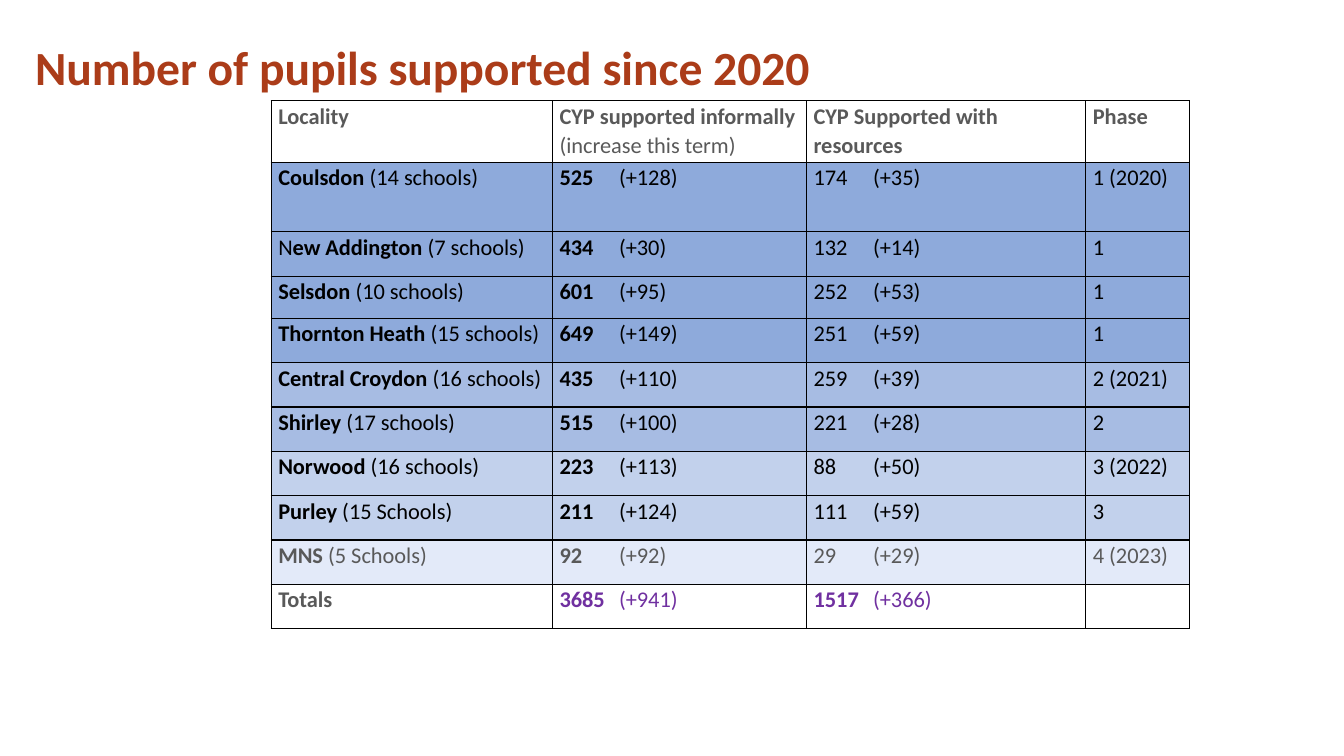
from lxml.etree import SubElement
from pptx import Presentation
from pptx.dml.color import RGBColor
from pptx.enum.text import MSO_ANCHOR
from pptx.oxml.ns import qn
from pptx.util import Inches, Pt

BLACK, GREY, PURPLE, RUST = "000000", "595959", "7030A0", "AB3C19"
DEEP_BLUE, MID_BLUE, LIGHT_BLUE, PALE_BLUE = "8EAADB", "A7BCE3", "C2D1EC", "E3EAF9"


def write_text(frame, text, size=16, color=BLACK, line_spacing=1.07, space_after=8, tab=None):
    """Write one paragraph; parts between asterisks are bold."""
    paragraph = frame.paragraphs[0]
    if tab:
        tab_list = SubElement(paragraph._p.get_or_add_pPr(), qn("a:tabLst"))
        SubElement(tab_list, qn("a:tab"), pos=str(Inches(tab)), algn="l")
    paragraph.line_spacing = line_spacing
    paragraph.space_after = Pt(space_after)
    for index, part in enumerate(text.split("*")):
        if part:
            run = paragraph.add_run()
            run.text = part
            run.font.name = "Calibri"
            run.font.size = Pt(size)
            run.font.bold = index % 2 == 1
            run.font.color.rgb = RGBColor.from_string(color)


def style_cell(cell, fill):
    """Set insets, fill and a thin black border on all four sides."""
    cell.margin_left = cell.margin_right = Inches(0.07)
    cell.margin_top = cell.margin_bottom = 0
    properties = cell._tc.get_or_add_tcPr()
    for side in ("a:lnL", "a:lnR", "a:lnT", "a:lnB"):
        line = SubElement(properties, qn(side), w=str(Pt(1)))
        solid = SubElement(line, qn("a:solidFill"))
        SubElement(solid, qn("a:srgbClr"), val=BLACK)
    if fill:
        cell.fill.solid()
        cell.fill.fore_color.rgb = RGBColor.from_string(fill)
    else:
        cell.fill.background()


presentation = Presentation()
presentation.slide_width = Inches(13.33)
presentation.slide_height = Inches(7.5)
slide = presentation.slides.add_slide(presentation.slide_layouts[6])

# Title
title = slide.shapes.add_textbox(Inches(0.25), Inches(0.16), Inches(9.64), Inches(0.84))
title.text_frame.word_wrap = True
title.text_frame.vertical_anchor = MSO_ANCHOR.BOTTOM
write_text(title.text_frame, "*Number of pupils supported since 2020*",
           size=34, color=RUST, line_spacing=0.9, space_after=0)

# Table contents: row fill, text colour, then the four cells
rows = [
    (None, GREY, "*Locality*", "*CYP supported informally *(increase this term)",
     "*CYP Supported with resources*", "*Phase*"),
    (DEEP_BLUE, BLACK, "*Coulsdon* (14 schools)", "*525*\t(+128)", "174\t(+35)", "1 (2020)"),
    (DEEP_BLUE, BLACK, "N*ew Addington *(7 schools)", "*434*\t(+30)", "132\t(+14)", "1"),
    (DEEP_BLUE, BLACK, "*Selsdon* (10 schools)", "*601*\t(+95)", "252\t(+53)", "1"),
    (DEEP_BLUE, BLACK, "*Thornton Heath *(15 schools)", "*649*\t(+149)", "251\t(+59)", "1"),
    (MID_BLUE, BLACK, "*Central Croydon *(16 schools)", "*435*\t(+110)", "259\t(+39)", "2 (2021)"),
    (MID_BLUE, BLACK, "*Shirley* (17 schools)", "*515*\t(+100)", "221\t(+28)", "2"),
    (LIGHT_BLUE, BLACK, "*Norwood* (16 schools)", "*223*\t(+113)", "88\t(+50)", "3 (2022)"),
    (LIGHT_BLUE, BLACK, "*Purley* (15 Schools)", "*211*\t(+124)", "111\t(+59)", "3"),
    (PALE_BLUE, GREY, "*MNS *(5 Schools)", "*92*\t(+92)", "29\t(+29)", "4 (2023)"),
    (None, GREY, "*Totals*", "*3685*\t(+941)", "*1517*\t(+366)", ""),
]
column_widths = [2.79, 2.52, 2.77, 1.03]
row_heights = [0.61, 0.69, 0.44, 0.42] + [0.44] * 7

# Table grid
frame = slide.shapes.add_table(len(rows), len(column_widths), Inches(2.69), Inches(1),
                               Inches(sum(column_widths)), Inches(sum(row_heights)))
table = frame.table
table.horz_banding = False
for column, width in zip(table.columns, column_widths):
    column.width = Inches(width)
for row, height in zip(table.rows, row_heights):
    row.height = Inches(height)

# Table cells: increases line up on a tab stop, totals stand out in purple
for row_index, (fill, color, *texts) in enumerate(rows):
    for column_index, text in enumerate(texts):
        cell = table.cell(row_index, column_index)
        style_cell(cell, fill)
        is_total = row_index == len(rows) - 1 and column_index > 0
        write_text(cell.text_frame, text, color=PURPLE if is_total else color,
                   tab=0.59 if "\t" in text else None)

presentation.save("out.pptx")
